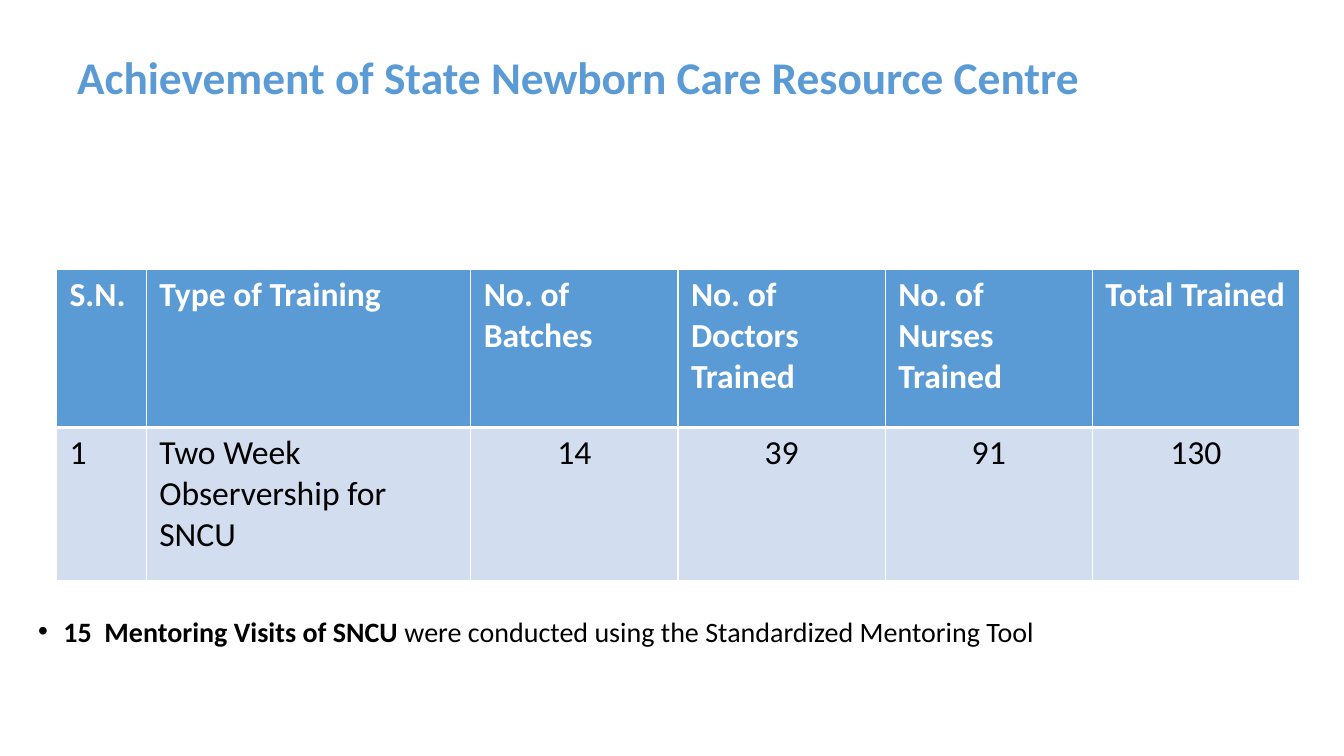
from lxml import etree
from pptx import Presentation
from pptx import util as u
from pptx.dml import color
from pptx.enum import text
from pptx.oxml import ns

BLUE, PALE, WHITE, BLACK = "5B9BD5", "D2DEEF", "FFFFFF", "000000"
LEFT, CENTER = text.PP_ALIGN.LEFT, text.PP_ALIGN.CENTER


def rgb(value):
    return color.RGBColor.from_string(value)


def write(paragraph, content, size=20, colour=BLACK, bold=False, align=LEFT, font="Calibri"):
    paragraph.alignment = align
    run = paragraph.add_run()
    run.text = content
    run.font.name = font
    run.font.size = u.Pt(size)
    run.font.bold = bold
    run.font.color.rgb = rgb(colour)


class Sheet:
    line_spacing = 0.9

    def __init__(self, presentation):
        self.width = presentation.slide_width
        self.height = presentation.slide_height
        self.slide = presentation.slides.add_slide(presentation.slide_layouts[6])

    def across(self, percent):
        return u.Emu(round(self.width * percent / 100))

    def down(self, percent):
        return u.Emu(round(self.height * percent / 100))

    def place(self, left, top, width, height):
        return self.across(left), self.down(top), self.across(width), self.down(height)

    def text_box(self, area, runs, anchor=text.MSO_ANCHOR.TOP, bullet=False):
        frame = self.slide.shapes.add_textbox(*self.place(*area)).text_frame
        frame.word_wrap = True
        frame.vertical_anchor = anchor
        paragraph = frame.paragraphs[0]
        paragraph.line_spacing = self.line_spacing
        for content, style in runs:
            write(paragraph, content, **style)
        if bullet:
            self.add_bullet(paragraph)

    def add_bullet(self, paragraph):
        properties = paragraph._p.get_or_add_pPr()
        indent = u.Inches(0.25)
        properties.set("marL", str(indent))
        properties.set("indent", str(-indent))
        etree.SubElement(properties, ns.qn("a:buFont"), typeface="Arial")
        etree.SubElement(properties, ns.qn("a:buChar"), char="•")

    def add_borders(self, cell, bottom):
        properties = cell._tc.get_or_add_tcPr()
        for position, (side, points) in enumerate([("L", 1), ("R", 1), ("T", 1), ("B", bottom)]):
            line = etree.Element(ns.qn(f"a:ln{side}"), w=str(u.Pt(points)))
            fill = etree.SubElement(line, ns.qn("a:solidFill"))
            etree.SubElement(fill, ns.qn("a:srgbClr"), val=WHITE)
            properties.insert(position, line)

    def fill_cell(self, cell, content, fill, bottom=1, **style):
        cell.fill.solid()
        cell.fill.fore_color.rgb = rgb(fill)
        cell.margin_left = cell.margin_right = u.Inches(0.13)
        cell.margin_top = cell.margin_bottom = u.Inches(0.05)
        write(cell.text_frame.paragraphs[0], content, size=24, **style)
        self.add_borders(cell, bottom)

    def table(self, left, top, columns, rows, header, body):
        area = self.place(left, top, sum(columns), sum(rows))
        table = self.slide.shapes.add_table(len(rows), len(columns), *area).table
        table.first_row = table.horz_banding = False
        for column, share in zip(table.columns, columns):
            column.width = self.across(share)
        for row, share in zip(table.rows, rows):
            row.height = self.down(share)
        for index, heading in enumerate(header):
            self.fill_cell(table.cell(0, index), heading, BLUE, bottom=3, colour=WHITE, bold=True)
        for row, values in enumerate(body, start=1):
            for index, value in enumerate(values):
                align = LEFT if index < 2 else CENTER
                self.fill_cell(table.cell(row, index), value, PALE, align=align)


def main():
    presentation = Presentation()
    presentation.slide_width = u.Inches(13.33)
    presentation.slide_height = u.Inches(7.5)
    sheet = Sheet(presentation)
    sheet.text_box(
        (5, 3.73, 90, 13.73),
        [("Achievement of State Newborn Care Resource Centre",
          {"size": 32.4, "colour": BLUE, "bold": True})],
        anchor=text.MSO_ANCHOR.MIDDLE,
    )
    sheet.table(
        4.2, 35.6,
        columns=[6.68, 24.15] + [15.42] * 4,
        rows=[20.93, 20.27],
        header=["S.N.", "Type of Training", "No. of Batches", "No. of Doctors Trained",
                "No. of Nurses Trained", "Total Trained"],
        body=[["1", "Two Week Observership for SNCU", "14", "39", "91", "130"]],
    )
    sheet.text_box(
        (2.1, 81.07, 95.85, 5.6),
        [("15  Mentoring Visits of SNCU ", {"bold": True}),
         ("were conducted using the Standardized Mentoring Tool", {})],
        bullet=True,
    )
    presentation.save("out.pptx")


if __name__ == "__main__":
    main()
